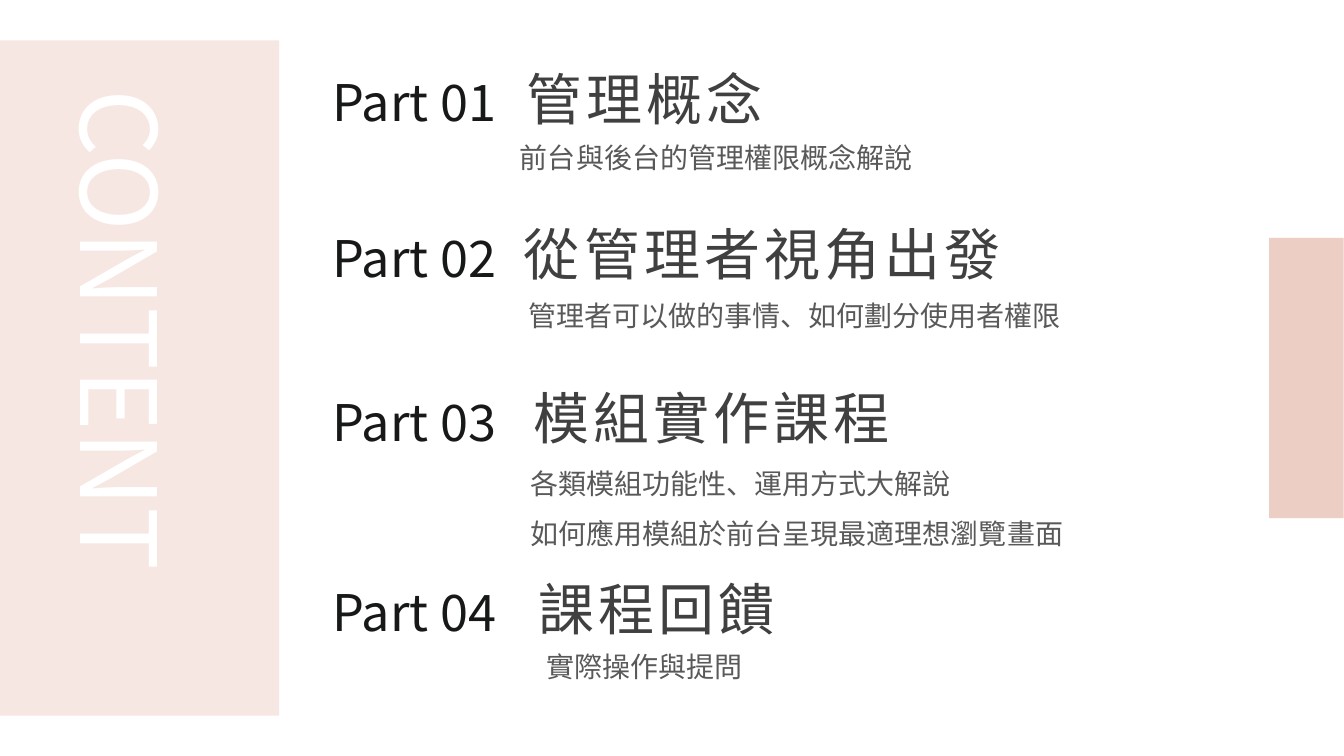
"""Build a contents slide with four parts beside a vertical heading."""
from dataclasses import dataclass

from lxml.etree import SubElement
from pptx import Presentation
from pptx.dml.color import RGBColor
from pptx.enum.shapes import MSO_SHAPE
from pptx.enum.text import MSO_ANCHOR, PP_ALIGN
from pptx.oxml.ns import qn
from pptx.shapes.autoshape import Shape
from pptx.shapes.shapetree import GroupShapes, SlideShapes
from pptx.util import Pt

FONT = "Noto Sans CJK SC"
COLORS = {
    "band": "F6E7E2",
    "tab": "ECCEC4",
    "head": "FFFFFF",
    "part": "171919",
    "title": "404040",
    "note": "595959",
}
SIZES = {"head": 75, "part": 36, "title": 40, "note": 20}
TRACKS = {"title": 300}
FRAME = {"word_wrap": True, "vertical_anchor": MSO_ANCHOR.TOP}
FLUSH = {"margin_left": 0, "margin_right": 0, "margin_top": 0, "margin_bottom": 0}


@dataclass(frozen=True)
class Box:
    left: float
    top: float
    width: float
    height: float

    def lengths(self) -> list[Pt]:
        return [Pt(n) for n in (self.left, self.top, self.width, self.height)]


@dataclass(frozen=True)
class Panel:
    role: str
    box: Box


@dataclass(frozen=True)
class Part:
    top: float
    title: str
    left: float
    width: float
    align: PP_ALIGN
    notes: tuple[str, ...]
    area: Box
    pitch: float = 1.0


PANELS = (
    Panel("band", Box(0, 28.8, 199.44, 482.4)),
    Panel("tab", Box(906.48, 169.92, 53.28, 200.16)),
)
PARTS = (
    Part(47.5, "管理概念", 361.44, 198, PP_ALIGN.CENTER,
         ("前台與後台的管理權限概念解說",), Box(364.32, 96.48, 313.2, 31.5)),
    Part(158.4, "從管理者視角出發", 367.2, 457.92, PP_ALIGN.LEFT,
         ("管理者可以做的事情、如何劃分使用者權限",), Box(370.08, 209.52, 505.44, 31.5)),
    Part(275.76, "模組實作課程", 361.44, 293.76, PP_ALIGN.CENTER,
         (" 各類模組功能性、運用方式大解說", " 如何應用模組於前台呈現最適理想瀏覽畫面"),
         Box(367.2, 317.52, 421.2, 75.6), 1.5),
    Part(411.84, "課程回饋", 370.08, 198, PP_ALIGN.CENTER,
         ("實際操作與提問",), Box(383.04, 460.08, 313.2, 31.5)),
)


def tint(name: str) -> RGBColor:
    return RGBColor.from_string(COLORS[name])


def draw_panel(shapes: SlideShapes, panel: Panel) -> None:
    shape = shapes.add_shape(MSO_SHAPE.RECTANGLE, *panel.box.lengths())
    shape.shadow.inherit = False
    shape.fill.solid()
    shape.fill.fore_color.rgb = tint(panel.role)
    shape.line.fill.background()


def draw_text(shapes: SlideShapes | GroupShapes, role: str, box: Box,
              lines: tuple[str, ...], align: PP_ALIGN = PP_ALIGN.LEFT,
              pitch: float = 1.0) -> Shape:
    shape = shapes.add_textbox(*box.lengths())
    frame = shape.text_frame
    for key, value in FRAME.items():
        setattr(frame, key, value)
    frame.text = "\n".join(lines)
    for para in frame.paragraphs:
        for key, value in {"alignment": align, "line_spacing": pitch}.items():
            setattr(para, key, value)
        run = para.runs[0]
        for key, value in {"name": FONT, "size": Pt(SIZES[role])}.items():
            setattr(run.font, key, value)
        run.font.color.rgb = tint(role)
        props = run.font._element
        SubElement(props, qn("a:ea")).set("typeface", FONT)
        if role in TRACKS:
            props.set("spc", str(TRACKS[role]))
    return shape


def draw_head(shapes: SlideShapes) -> None:
    shape = draw_text(shapes, "head", Box(23.8, 64, 108.6, 390), ("CONTENT",))
    for key, value in FLUSH.items():
        setattr(shape.text_frame, key, value)
    shape.text_frame._txBody.bodyPr.set("vert", "vert")


def draw_part(shapes: SlideShapes, index: int, part: Part) -> None:
    group = shapes.add_group_shape().shapes
    draw_text(group, "part", Box(230.4, part.top, 152.64, 51), (f"Part {index:02d}",))
    draw_text(group, "title", Box(part.left, part.top - 5, part.width, 55.5),
              (part.title,), part.align)
    draw_text(group, "note", part.area, part.notes, pitch=part.pitch)


def main() -> None:
    deck = Presentation()
    deck.slide_width, deck.slide_height = Pt(960), Pt(540)
    shapes = deck.slides.add_slide(deck.slide_layouts[6]).shapes
    for panel in PANELS:
        draw_panel(shapes, panel)
    draw_head(shapes)
    for index, part in enumerate(PARTS, 1):
        draw_part(shapes, index, part)
    deck.save("out.pptx")


if __name__ == "__main__":
    main()
